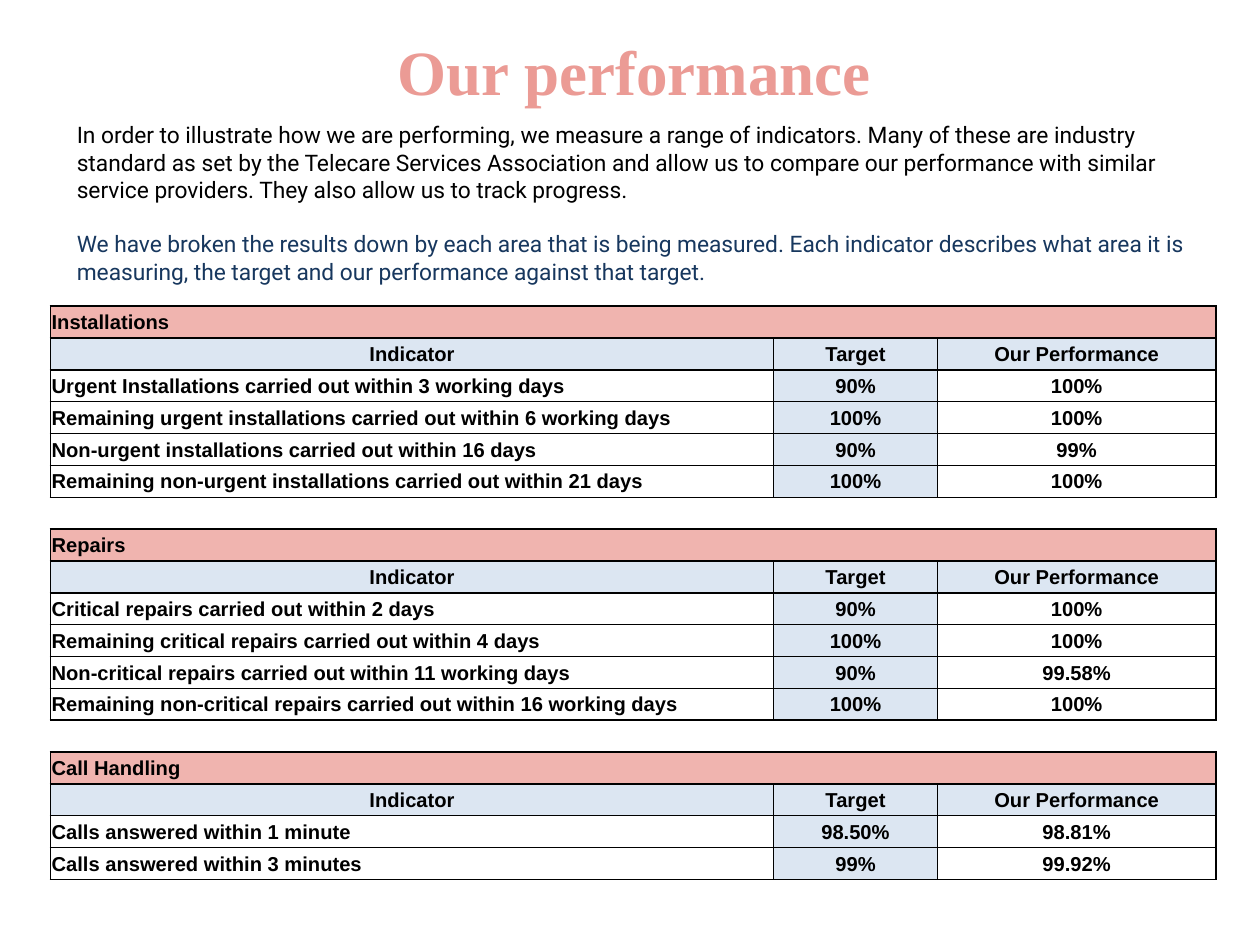
"""Build the telecare performance slide with its indicator table."""
import dataclasses

import lxml.etree
import pptx
import pptx.dml.color
import pptx.enum.text
import pptx.oxml.ns
import pptx.util
from pptx.util import Inches


@dataclasses.dataclass(frozen=True)
class Theme:
    title_font: str = "Times New Roman"
    body_font: str = "Roboto"
    table_font: str = "Arial"
    title_size: float = 36
    body_size: float = 13
    table_size: float = 11.5
    coral: str = "EB9B95"
    pale_blue: str = "DCE6F2"
    navy: str = "17375E"
    black: str = "000000"
    section_alpha: int = 75
    border_width: float = 1


theme = Theme()
qn = pptx.oxml.ns.qn
align = pptx.enum.text.PP_ALIGN
anchor = pptx.enum.text.MSO_ANCHOR


def add_text(paragraph, text, font, size, color, bold=False):
    run = paragraph.add_run()
    run.text = text
    run.font.name = font
    run.font.size = pptx.util.Pt(size)
    run.font.bold = bold
    run.font.color.rgb = pptx.dml.color.RGBColor.from_string(color)


def style_cell(cell, fill, alpha, bordered_sides):
    cell.margin_left = cell.margin_right = cell.margin_top = Inches(0.01)
    cell.margin_bottom = 0
    cell.vertical_anchor = anchor.MIDDLE
    properties = cell._tc.get_or_add_tcPr()
    for side in "LRTB":
        line = lxml.etree.SubElement(properties, qn(f"a:ln{side}"), w=str(pptx.util.Pt(theme.border_width)))
        if side in bordered_sides:
            solid = lxml.etree.SubElement(line, qn("a:solidFill"))
            lxml.etree.SubElement(solid, qn("a:srgbClr"), val=theme.black)
        else:
            lxml.etree.SubElement(line, qn("a:noFill"))
    if fill is None:
        cell.fill.background()
        return
    cell.fill.solid()
    cell.fill.fore_color.rgb = pptx.dml.color.RGBColor.from_string(fill)
    if alpha < 100:
        color = properties.find(qn("a:solidFill")).find(qn("a:srgbClr"))
        lxml.etree.SubElement(color, qn("a:alpha"), val=str(alpha * 1000))


presentation = pptx.Presentation()
presentation.slide_width = Inches(10)
presentation.slide_height = Inches(7.5)
slide = presentation.slides.add_slide(presentation.slide_layouts[1])

title = slide.shapes.title
title.left, title.top, title.width, title.height = (Inches(n) for n in (3.03, 0.2, 4.01, 0.71))
title.text_frame.auto_size = pptx.enum.text.MSO_AUTO_SIZE.NONE
title_paragraph = title.text_frame.paragraphs[0]
title_paragraph.alignment = align.CENTER
add_text(title_paragraph, "Our performance", theme.title_font, theme.title_size, theme.coral, True)

body = slide.placeholders[1]
body.left, body.top, body.width, body.height = (Inches(n) for n in (0.51, 0.91, 9.29, 1.41))
body.text_frame.auto_size = pptx.enum.text.MSO_AUTO_SIZE.NONE
introduction = [
    ("In order to illustrate how we are performing, we measure a range of indicators. "
     "Many of these are industry standard as set by the Telecare Services Association and "
     "allow us to compare our performance with similar service providers. "
     "They also allow us to track progress.", theme.black, 0),
    ("We have broken the results down by each area that is being measured. "
     "Each indicator describes what area it is measuring, the target and our performance "
     "against that target.", theme.navy, 15.5),
]
for index, (text, color, space_before) in enumerate(introduction):
    paragraph = body.text_frame.add_paragraph() if index else body.text_frame.paragraphs[0]
    properties = paragraph._p.get_or_add_pPr()
    properties.set("marL", "0")
    properties.set("indent", "0")
    lxml.etree.SubElement(properties, qn("a:buNone"))
    paragraph.space_before = pptx.util.Pt(space_before)
    add_text(paragraph, text, theme.body_font, theme.body_size, color)

sections = {
    "Installations": [
        ("Urgent Installations carried out within 3 working days", "90%", "100%"),
        ("Remaining urgent installations carried out within 6 working days", "100%", "100%"),
        ("Non-urgent installations carried out within 16 days", "90%", "99%"),
        ("Remaining non-urgent installations carried out within 21 days", "100%", "100%"),
    ],
    "Repairs": [
        ("Critical repairs carried out within 2 days", "90%", "100%"),
        ("Remaining critical repairs carried out within 4 days", "100%", "100%"),
        ("Non-critical repairs carried out within 11 working days", "90%", "99.58%"),
        ("Remaining non-critical repairs carried out within 16 working days", "100%", "100%"),
    ],
    "Call Handling": [
        ("Calls answered within 1 minute", "98.50%", "98.81%"),
        ("Calls answered within 3 minutes", "99%", "99.92%"),
    ],
}
table_rows = []
for section, indicators in sections.items():
    if table_rows:
        table_rows.append(("spacer", ("", "", "")))
    table_rows.append(("section", (section, "", "")))
    table_rows.append(("header", ("Indicator", "Target", "Our Performance")))
    table_rows.extend(("indicator", indicator) for indicator in indicators)

column_widths = (5.74, 1.3, 2.21)
table_height = Inches(4.55)
table = slide.shapes.add_table(
    len(table_rows), len(column_widths), Inches(0.4), Inches(2.43), Inches(sum(column_widths)), table_height
).table
table.first_row = table.horz_banding = False
for column, width in zip(table.columns, column_widths):
    column.width = Inches(width)

for row_index, (kind, texts) in enumerate(table_rows):
    table.rows[row_index].height = table_height // len(table_rows)
    for column_index, text in enumerate(texts):
        cell = table.cell(row_index, column_index)
        fill, alpha = None, 100
        if kind == "section":
            fill, alpha = theme.coral, theme.section_alpha
        elif kind == "header" or (kind == "indicator" and column_index == 1):
            fill = theme.pale_blue
        style_cell(cell, fill, alpha, "TB" if kind == "spacer" else "LRTB")
        paragraph = cell.text_frame.paragraphs[0]
        centered = kind == "header" or column_index > 0
        paragraph.alignment = align.CENTER if centered else align.LEFT
        if text:
            add_text(paragraph, text, theme.table_font, theme.table_size, theme.black, True)
        else:
            lxml.etree.SubElement(paragraph._p, qn("a:endParaRPr"), sz=str(int(theme.table_size * 100)))
    if kind == "section":
        table.cell(row_index, 0).merge(table.cell(row_index, len(column_widths) - 1))

presentation.save("out.pptx")
